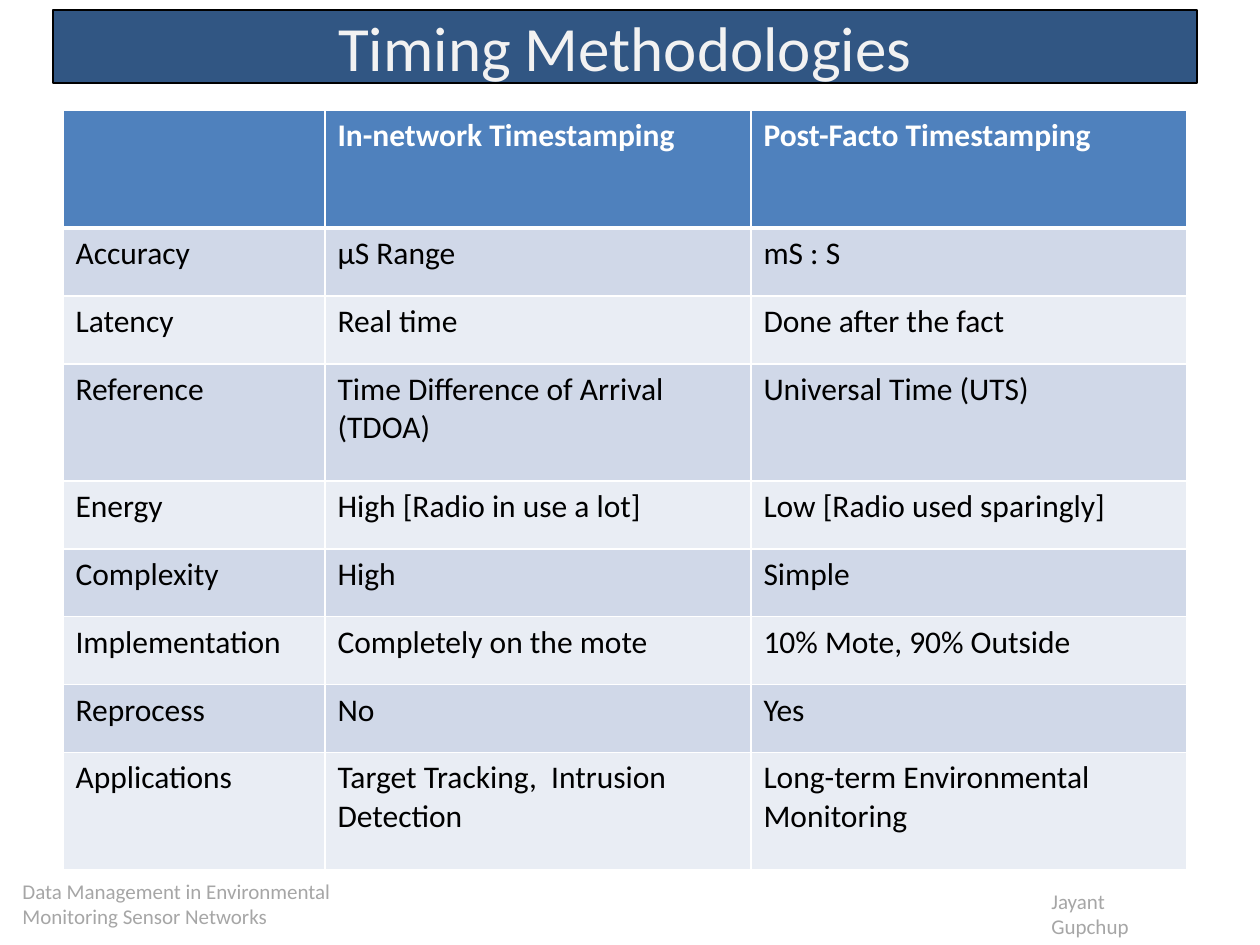
from pptx import Presentation
from pptx.dml.color import RGBColor
from pptx.enum.shapes import MSO_SHAPE
from pptx.enum.text import MSO_ANCHOR, PP_ALIGN
from pptx.oxml import parse_xml
from pptx.oxml.ns import nsdecls
from pptx.util import Pt

SCALE = 914400 / 126


def px(*lengths):
    return [round(length * SCALE) for length in lengths]


def style(para, size, color, bold=False):
    para.font.name = "Calibri"
    para.font.size = Pt(size)
    para.font.bold = bold
    para.font.color.rgb = RGBColor.from_string(color)


deck = Presentation()
deck.slide_width, deck.slide_height = px(1260, 945)
page = deck.slides.add_slide(deck.slide_layouts[6])

footers = [
    ((10, 872, 410, 63), ["Data Management in Environmental", "Monitoring Sensor Networks"]),
    ((1039, 882, 159, 63), ["Jayant Gupchup"]),
]
for bounds, lines in footers:
    frame = page.shapes.add_textbox(*px(*bounds)).text_frame
    frame.word_wrap = True
    frame.text = "\n".join(lines)
    for para in frame.paragraphs:
        style(para, 12, "A6A6A6")

title = page.shapes.add_shape(MSO_SHAPE.RECTANGLE, *px(53, 10, 1144, 73))
title.shadow.inherit = False
title.fill.solid()
title.fill.fore_color.rgb = RGBColor.from_string("315683")
title.line.color.rgb = RGBColor.from_string("000000")
title.line.width = Pt(1)
title.text_frame.text = "Timing Methodologies"
title.text_frame.vertical_anchor = MSO_ANCHOR.MIDDLE
para = title.text_frame.paragraphs[0]
para.alignment = PP_ALIGN.CENTER
style(para, 36, "F2F2F2")

rows = [
    ("", "In-network Timestamping", "Post-Facto Timestamping"),
    ("Accuracy", "μS Range", "mS : S"),
    ("Latency", "Real time", "Done after the fact"),
    ("Reference", "Time Difference of Arrival (TDOA)", "Universal Time (UTS)"),
    ("Energy", "High [Radio in use a lot]", "Low [Radio used sparingly]"),
    ("Complexity", "High", "Simple"),
    ("Implementation", "Completely on the mote", "10% Mote, 90% Outside"),
    ("Reprocess", "No", "Yes"),
    ("Applications", "Target Tracking,  Intrusion Detection", "Long-term Environmental Monitoring"),
]
widths = px(262, 426, 436)
heights = px(118, 68, 68, 117, 68, 68, 68, 68, 117)
table = page.shapes.add_table(
    len(rows), len(widths), *px(63, 110), sum(widths), sum(heights)
).table
for column, width in zip(table.columns, widths):
    column.width = width

for row_index, texts in enumerate(rows):
    table.rows[row_index].height = heights[row_index]
    header = row_index == 0
    fill = "4F81BD" if header else ("E9EDF4", "D0D8E8")[row_index % 2]
    for column_index, text in enumerate(texts):
        cell = table.cell(row_index, column_index)
        cell.text = text
        style(cell.text_frame.paragraphs[0], 18, "FFFFFF" if header else "000000", header)
        borders = {"lnL": 1, "lnR": 1, "lnT": 3 if row_index == 1 else 1, "lnB": 3 if header else 1}
        for side, width in borders.items():
            cell._tc.get_or_add_tcPr().append(parse_xml(
                f'<a:{side} {nsdecls("a")} w="{Pt(width)}"><a:solidFill>'
                f'<a:srgbClr val="FFFFFF"/></a:solidFill></a:{side}>'
            ))
        cell.fill.solid()
        cell.fill.fore_color.rgb = RGBColor.from_string(fill)

deck.save("out.pptx")
